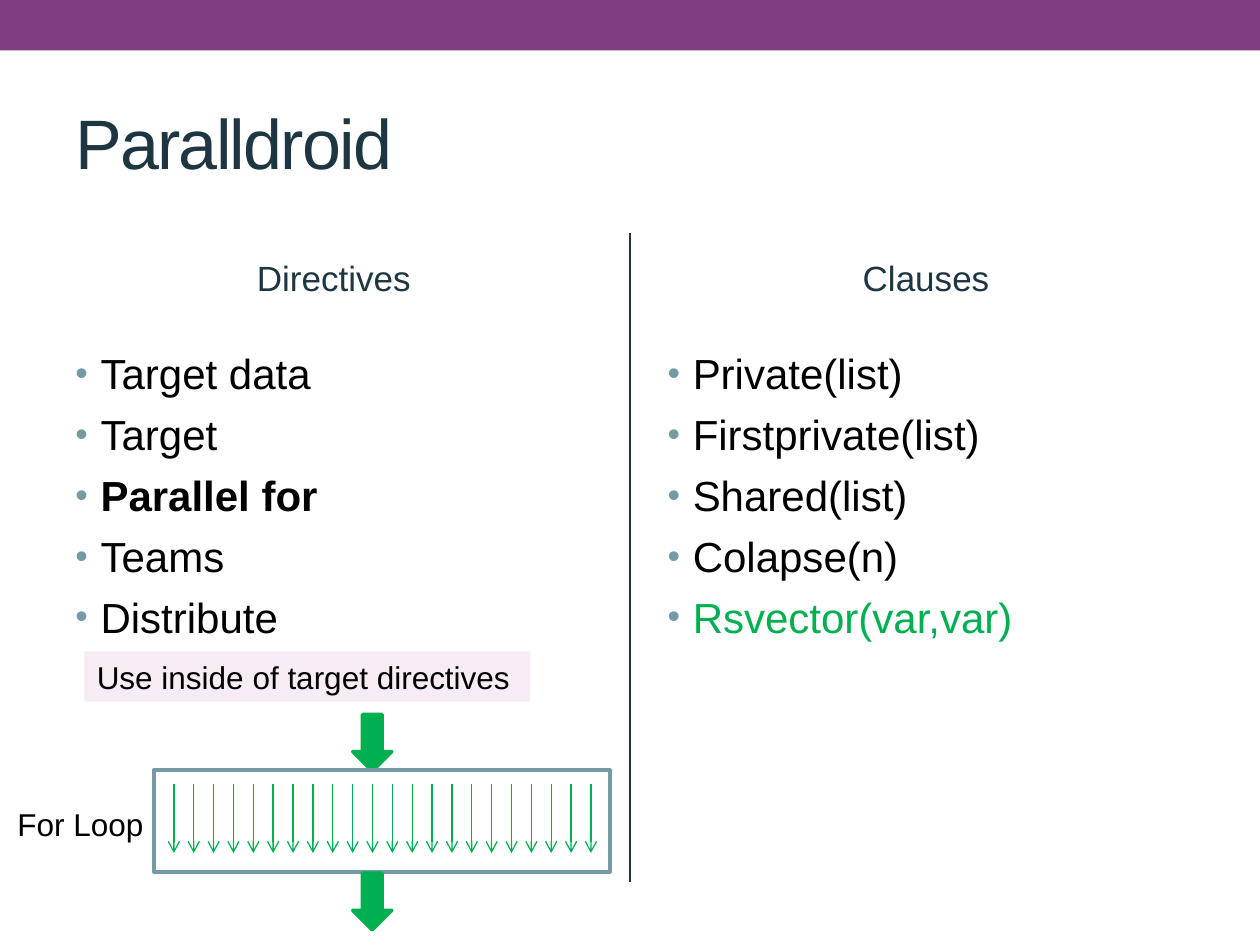
"""Build the Paralldroid slide comparing directives and clauses."""
from dataclasses import dataclass

from lxml import etree
from pptx import Presentation
from pptx.dml.color import RGBColor
from pptx.enum import shapes, text
from pptx.oxml import ns
from pptx.util import Inches, Pt

INK, BLACK, STEEL, GREEN = "1D3641", "000000", "759AA5", "00B050"
LOOP_ARROWS = 22


@dataclass
class Box:
    left: float
    top: float
    width: float
    height: float

    def lengths(self) -> tuple:
        return tuple(map(Inches, (self.left, self.top, self.width, self.height)))


@dataclass
class Column:
    left: float
    heading: str
    items: list[str]
    bold: str = ""
    green: str = ""


COLUMNS = [
    Column(0.5, "Directives",
           ["Target data", "Target", "Parallel for", "Teams", "Distribute"],
           bold="Parallel for"),
    Column(5.2, "Clauses",
           ["Private(list)", "Firstprivate(list)", "Shared(list)",
            "Colapse(n)", "Rsvector(var,var)"],
           green="Rsvector(var,var)"),
]


def paint(color_format, color: str) -> None:
    color_format.rgb = RGBColor.from_string(color)


def add_child(parent, tag: str, **attributes: str):
    return etree.SubElement(parent, ns.qn(tag), attributes)


def style(paragraph, size: float, color: str, bold: bool = False) -> None:
    for run in paragraph.runs:
        run.font.name = "Arial"
        run.font.size = Pt(size)
        run.font.bold = bold
        paint(run.font.color, color)


def add_bullet(paragraph) -> None:
    properties = paragraph._p.get_or_add_pPr()
    properties.set("marL", str(Inches(0.2)))
    properties.set("indent", str(Inches(-0.2)))
    add_child(add_child(properties, "a:buClr"), "a:srgbClr", val=STEEL)
    add_child(properties, "a:buSzPct", val="85000")
    add_child(properties, "a:buFont", typeface="Arial")
    add_child(properties, "a:buChar", char="•")


def add_label(slide, box: Box, wording: str, size: float, color: str,
              wrap: bool = True, middle: bool = False):
    label = slide.shapes.add_textbox(*box.lengths())
    frame = label.text_frame
    frame.text = wording
    frame.word_wrap = wrap
    if middle:
        frame.vertical_anchor = text.MSO_ANCHOR.MIDDLE
    style(frame.paragraphs[0], size, color)
    return label


def add_block(slide, kind, box: Box, fill: str, outline: str = ""):
    block = slide.shapes.add_shape(kind, *box.lengths())
    block.shadow.inherit = False
    block.fill.solid()
    paint(block.fill.fore_color, fill)
    if outline:
        paint(block.line.color, outline)
        block.line.width = Pt(2.08)
    else:
        block.line.fill.background()
    return block


def add_vertical(slide, x: float, top: float, bottom: float,
                 color: str, width: float, arrow: bool = False) -> None:
    line = slide.shapes.add_connector(
        shapes.MSO_CONNECTOR.STRAIGHT,
        Inches(x), Inches(top), Inches(x), Inches(bottom))
    paint(line.line.color, color)
    line.line.width = Pt(width)
    if arrow:
        add_child(line.line._get_or_add_ln(), "a:tailEnd", type="arrow")
    add_child(line._element.spPr, "a:effectLst")


def add_column(slide, column: Column) -> None:
    heading = add_label(slide, Box(column.left, 1.83, 4.3, 0.7),
                        column.heading, 20, INK, middle=True)
    heading.text_frame.margin_top = Inches(0.09)
    heading.text_frame.paragraphs[0].alignment = text.PP_ALIGN.CENTER

    listing = slide.shapes.add_textbox(*Box(column.left, 2.67, 4.3, 4.32).lengths())
    frame = listing.text_frame
    frame.word_wrap = True
    frame.margin_top = Inches(0.09)
    frame.text = "\n".join(column.items)
    for index, paragraph in enumerate(frame.paragraphs):
        item = column.items[index]
        add_bullet(paragraph)
        if index:
            paragraph.space_before = Pt(6)
        style(paragraph, 24, GREEN if item == column.green else BLACK,
              item == column.bold)


def add_loop(slide) -> None:
    rectangle, down_arrow = shapes.MSO_SHAPE.RECTANGLE, shapes.MSO_SHAPE.DOWN_ARROW
    add_block(slide, down_arrow, Box(2.8, 5.67, 0.31, 0.45), GREEN, GREEN)
    add_block(slide, rectangle, Box(1.22, 6.11, 3.62, 0.81), "FFFFFF", STEEL)
    first, last = 1.38, 4.69
    for index in range(LOOP_ARROWS):
        x = first + index * (last - first) / (LOOP_ARROWS - 1)
        add_vertical(slide, x, 6.22, 6.77, GREEN, 0.75, arrow=True)
    add_block(slide, down_arrow, Box(2.8, 6.93, 0.31, 0.45), GREEN, GREEN)
    add_label(slide, Box(0.04, 6.34, 1.21, 0.4), "For Loop", 18, BLACK, wrap=False)


def add_note(slide) -> None:
    note = add_block(slide, shapes.MSO_SHAPE.RECTANGLE,
                     Box(0.67, 5.17, 3.54, 0.4), "CF91C3")
    tint = note._element.spPr.find(ns.qn("a:solidFill"))[0]
    add_child(tint, "a:alpha", val="17000")
    note.text_frame.text = "Use inside of target directives"
    note.text_frame.word_wrap = True
    note.text_frame.vertical_anchor = text.MSO_ANCHOR.TOP
    paragraph = note.text_frame.paragraphs[0]
    paragraph.alignment = text.PP_ALIGN.LEFT
    style(paragraph, 18, BLACK)


def main() -> None:
    deck = Presentation()
    deck.slide_width, deck.slide_height = Inches(10), Inches(7.5)
    slide = deck.slides.add_slide(deck.slide_layouts[6])
    add_block(slide, shapes.MSO_SHAPE.RECTANGLE, Box(0, 0, 10, 0.4), "803E82")
    add_vertical(slide, 5, 1.85, 7, INK, 1.5)
    title = add_label(slide, Box(0.5, 0.58, 9, 1.08), "Paralldroid", 40, INK, middle=True)
    title.text_frame.paragraphs[0].runs[0].font._element.set("spc", "-100")
    for column in COLUMNS:
        add_column(slide, column)
    add_note(slide)
    add_loop(slide)
    deck.save("out.pptx")


if __name__ == "__main__":
    main()
